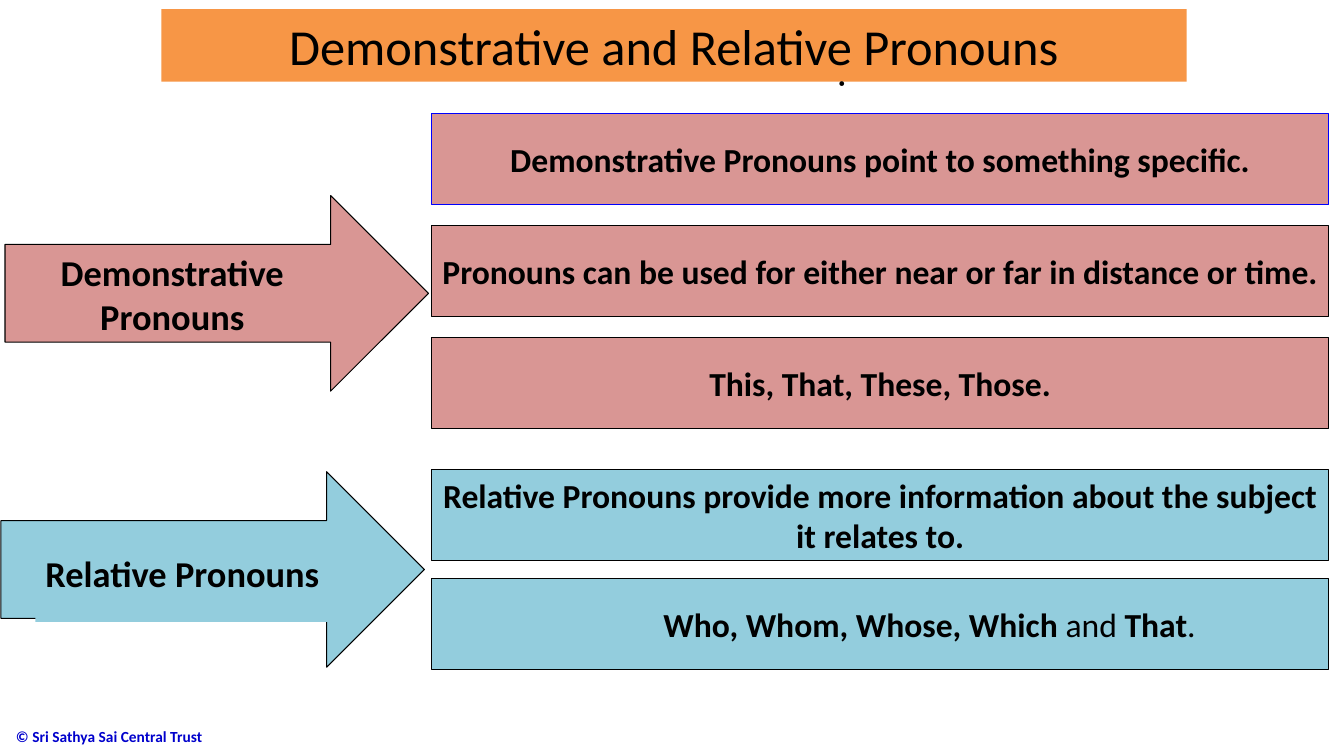
from dataclasses import dataclass

from pptx import Presentation
from pptx.dml.color import RGBColor
from pptx.enum.shapes import MSO_SHAPE
from pptx.enum.text import MSO_ANCHOR, PP_ALIGN
from pptx.util import Pt

PX = 9144  # 100 px to the inch


@dataclass(frozen=True)
class Theme:
    font: str = "Calibri"
    ink: str = "000000"
    title: str = "F79646"
    rose: str = "D99694"
    aqua: str = "93CDDD"
    edge: str = "0000FF"
    note: str = "0000CC"
    head: int = 36
    label: int = 26
    body: int = 24
    small: int = 11


THEME = Theme()


def color(code):
    return RGBColor.from_string(code)


def write(shape, runs, size, ink=THEME.ink, align=PP_ALIGN.CENTER, pad=(10, 5, 10, 5)):
    """Fill one paragraph from (text, bold) runs."""
    frame = shape.text_frame
    frame.word_wrap = True
    frame.vertical_anchor = MSO_ANCHOR.MIDDLE
    (frame.margin_left, frame.margin_top,
     frame.margin_right, frame.margin_bottom) = (n * PX for n in pad)
    line = frame.paragraphs[0]
    line.alignment = align
    for text, bold in runs:
        run = line.add_run()
        run.text = text
        run.font.name = THEME.font
        run.font.size = Pt(size)
        run.font.bold = bold
        run.font.color.rgb = color(ink)


def block(slide, box, fill, edge=None, kind=MSO_SHAPE.RECTANGLE):
    shape = slide.shapes.add_shape(kind, *(n * PX for n in box))
    shape.shadow.inherit = False
    shape.fill.solid()
    shape.fill.fore_color.rgb = color(fill)
    if edge:
        shape.line.color.rgb = color(edge)
        shape.line.width = Pt(0.75)
    else:
        shape.line.fill.background()
    return shape


def note(slide, box, text, size, **style):
    area = slide.shapes.add_textbox(*(n * PX for n in box))
    write(area, text, size, **style)


def banner(slide, box):
    title = block(slide, box, THEME.title)
    write(title, [("Demonstrative and Relative Pronouns", False)], THEME.head)
    # Stray dot under the title
    x, y, w, h = box
    note(slide, (x + 655, y + 50, 40, 41), [("·", False)], THEME.body, pad=(0, 0, 0, 0))


def facts(slide, box, step, fill, rows):
    """Stack fact bars; each row holds runs, outline and left padding."""
    x, y, w, h = box
    for i, (runs, edge, left) in enumerate(rows):
        bar = block(slide, (x, y + i * step, w, h), fill, edge)
        write(bar, runs, THEME.body, pad=(left, 5, 5, 5))


def pointer(slide, box, inner, fill, text):
    """Arrow with a label plate set relative to it."""
    x, y, w, h = box
    dx, dy, pw, ph = inner
    block(slide, box, fill, THEME.ink, MSO_SHAPE.RIGHT_ARROW)
    plate = block(slide, (x + dx, y + dy, pw, ph), fill)
    write(plate, [(text, True)], THEME.label)


def footer(slide, box):
    note(slide, box, [("© Sri Sathya Sai Central Trust", True)], THEME.small,
         ink=THEME.note, align=PP_ALIGN.LEFT)


def main():
    deck = Presentation()
    deck.slide_width, deck.slide_height = 1333 * PX, 750 * PX
    slide = deck.slides.add_slide(deck.slide_layouts[6])
    ink = THEME.ink

    footer(slide, (6, 710, 353, 41))
    banner(slide, (160, 9, 1017, 72))

    # Demonstrative pronouns
    facts(slide, (428, 113, 890, 90), 111, THEME.rose, [
        ([("Demonstrative Pronouns point to something specific.", True)], THEME.edge, 5),
        ([("Pronouns can be used for either near or far in distance or time.", True)], ink, 5),
        ([("This, That, These, Those.", True)], ink, 5),
    ])
    pointer(slide, (5, 194, 420, 194), (20, 64, 292, 67), THEME.rose,
            "Demonstrative Pronouns")

    # Relative pronouns
    facts(slide, (428, 466, 890, 90), 108, THEME.aqua, [
        ([("Relative Pronouns provide more information about the subject it relates to.",
           True)], ink, 5),
        ([("Who, Whom, Whose, Which ", True), ("and ", False),
          ("That", True), (".", False)], ink, 103),
    ])
    pointer(slide, (1, 468, 420, 194), (34, 51, 292, 98), THEME.aqua,
            "Relative Pronouns")

    deck.save("out.pptx")


if __name__ == "__main__":
    main()
